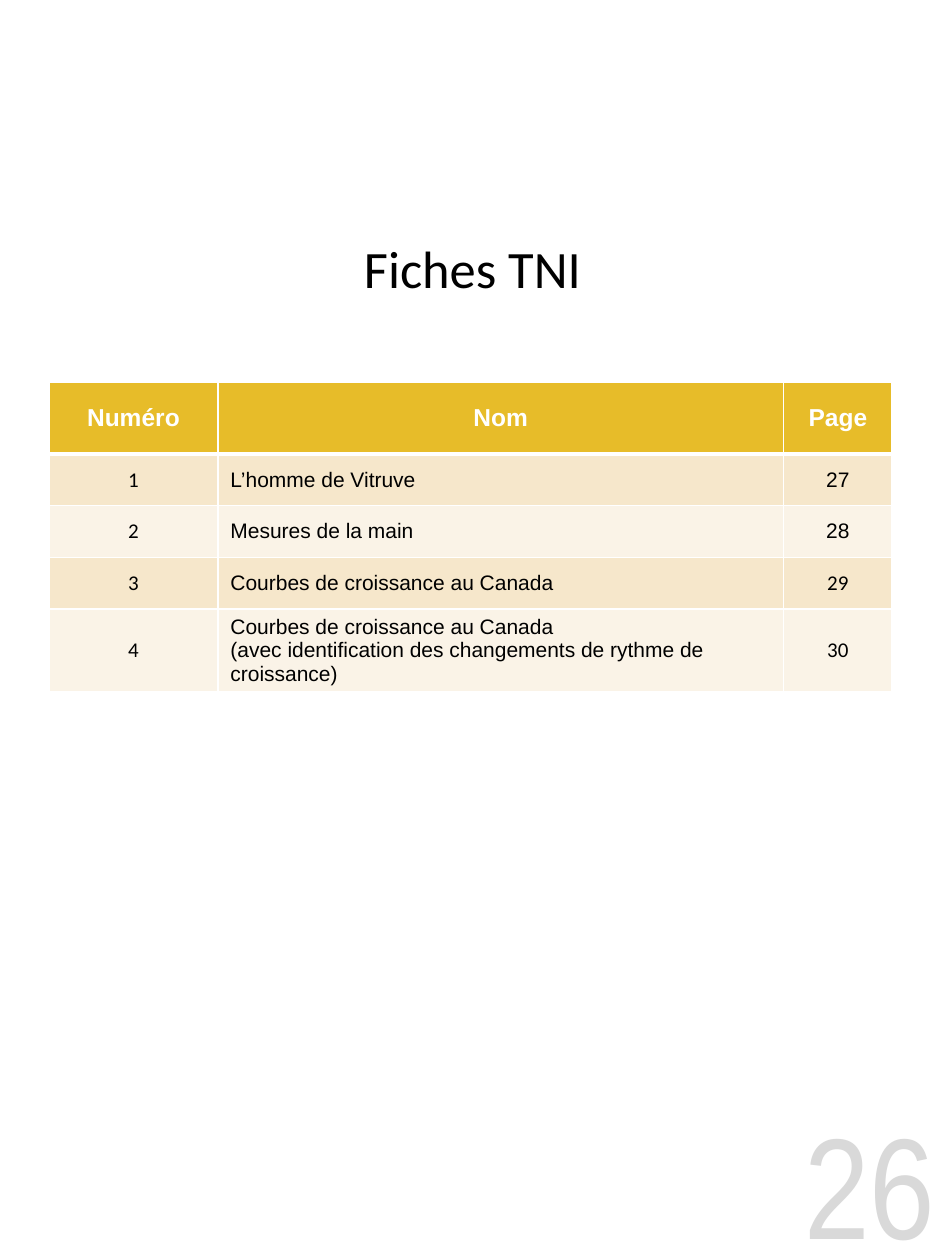
from lxml.etree import SubElement
from pptx import Presentation
from pptx.dml.color import RGBColor
from pptx.enum.text import MSO_ANCHOR as Anchor, PP_ALIGN as Align
from pptx.oxml.ns import qn
from pptx.util import Pt

WHITE, BLACK, GREY = "FFFFFF", "000000", "D9D9D9"
GOLD, BANDS = "E7BC29", ("F6E7CB", "FAF3E7")
COLUMN_WIDTHS = (96.5, 323.3, 62)
ROW_HEIGHTS = (41, 29.5, 29.5, 29.5, 36)
HEADINGS = ("Numéro", "Nom", "Page")
SHEETS = (
    ("L’homme de Vitruve", "27", "Arial"),
    ("Mesures de la main", "28", "Arial"),
    ("Courbes de croissance au Canada", "29", "Calibri"),
    ("Courbes de croissance au Canada\n"
     "(avec identification des changements de rythme de croissance)", "30", "Calibri"),
)


def color(code):
    """Turn a hex string into a colour."""
    return RGBColor.from_string(code)


def write(frame, text, size, face, code, align=Align.CENTER, bold=False):
    """Fill a text frame with evenly formatted paragraphs."""
    frame.text = text
    frame.word_wrap = True
    for para in frame.paragraphs:
        para.alignment = align
        para.font.size = Pt(size)
        para.font.name = face
        para.font.bold = bold
        para.font.color.rgb = color(code)


def add_border(cell, side, width):
    """Draw a white line along one side of a cell."""
    line = SubElement(cell._tc.get_or_add_tcPr(), qn(f"a:ln{side}"), w=str(Pt(width)))
    SubElement(SubElement(line, qn("a:solidFill")), qn("a:srgbClr"), val=WHITE)


def style_cell(cell, fill, top=1, bottom=1):
    """Give a cell its borders, fill and vertical alignment."""
    for side, width in (("L", 1), ("R", 1), ("T", top), ("B", bottom)):
        add_border(cell, side, width)
    cell.fill.solid()
    cell.fill.fore_color.rgb = color(fill)
    cell.vertical_anchor = Anchor.MIDDLE


def add_title(page, text):
    """Place and format the title."""
    title = page.shapes.title
    title.left, title.top, title.width, title.height = Pt(0), Pt(119), Pt(540), Pt(68)
    write(title.text_frame, text, 30, "Calibri", BLACK)
    title.text_frame.vertical_anchor = Anchor.MIDDLE


def add_sheet_table(page):
    """Add the table that lists the sheets."""
    table = page.shapes.add_table(
        len(ROW_HEIGHTS), len(COLUMN_WIDTHS), Pt(28), Pt(218.5),
        Pt(sum(COLUMN_WIDTHS)), Pt(sum(ROW_HEIGHTS))).table
    for column, width in zip(table.columns, COLUMN_WIDTHS):
        column.width = Pt(width)
    for row, height in zip(table.rows, ROW_HEIGHTS):
        row.height = Pt(height)
    for cell, heading in zip(table.rows[0].cells, HEADINGS):
        write(cell.text_frame, heading, 14, "Arial", WHITE, bold=True)
        style_cell(cell, GOLD, bottom=3)
    for number, (name, page_number, page_face) in enumerate(SHEETS, 1):
        entries = ((str(number), "Calibri", Align.CENTER),
                   (name, "Arial", Align.LEFT),
                   (page_number, page_face, Align.CENTER))
        for cell, (text, face, align) in zip(table.rows[number].cells, entries):
            write(cell.text_frame, text, 12, face, BLACK, align)
            style_cell(cell, BANDS[(number - 1) % 2], top=3 if number == 1 else 1)


def add_page_number(page, text):
    """Add the large page number in the corner."""
    box = page.shapes.add_textbox(Pt(434), Pt(631), Pt(107.5), Pt(89))
    write(box.text_frame, text, 82, "Arial Narrow", GREY, Align.RIGHT)
    box.text_frame.vertical_anchor = Anchor.MIDDLE


def main():
    """Build the deck and save it."""
    deck = Presentation()
    deck.slide_width, deck.slide_height = Pt(540), Pt(720)
    page = deck.slides.add_slide(deck.slide_layouts[5])
    add_title(page, "Fiches TNI")
    add_sheet_table(page)
    add_page_number(page, "26")
    deck.save("out.pptx")


if __name__ == "__main__":
    main()
